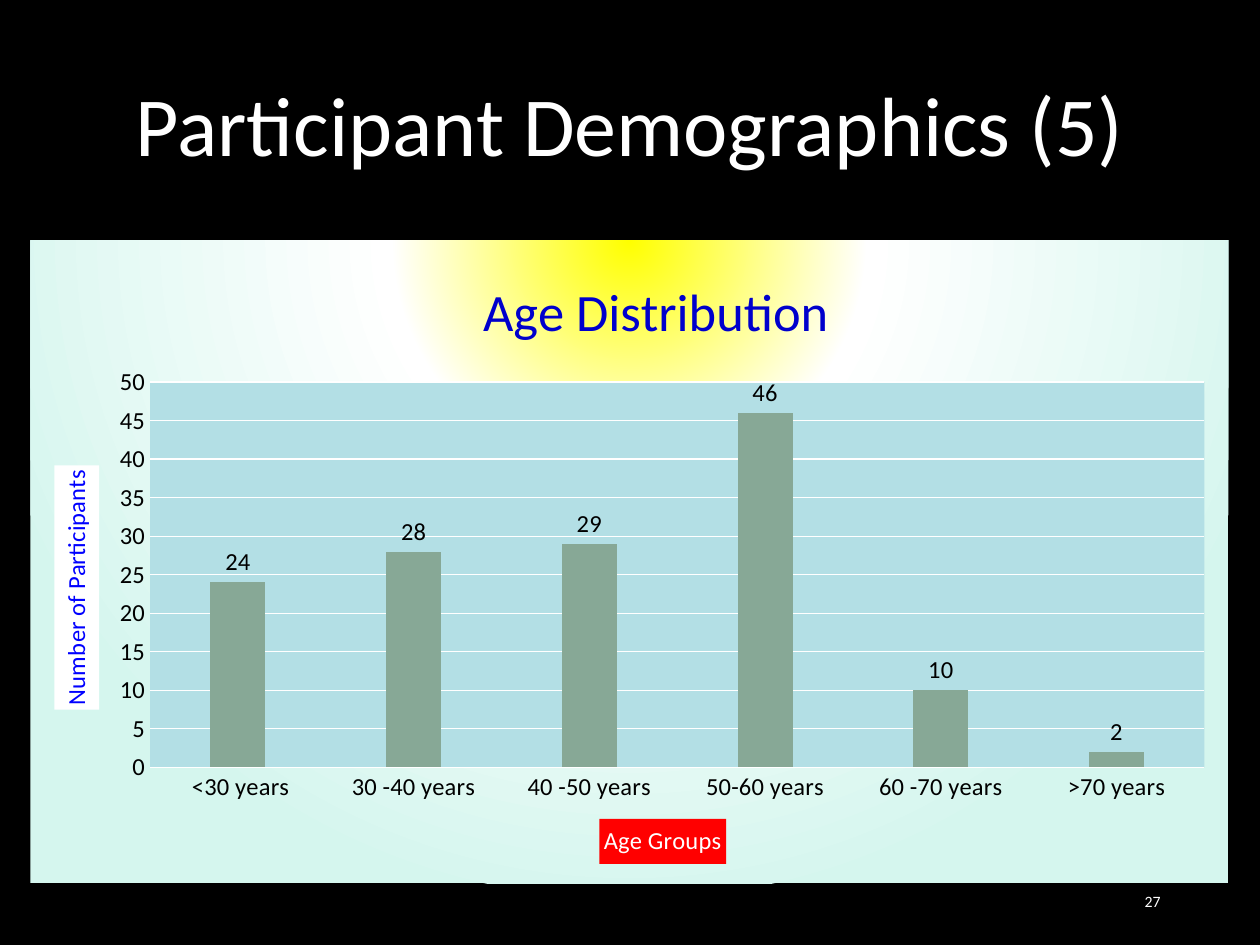
from lxml import etree
from pptx import Presentation
from pptx.chart.data import CategoryChartData
from pptx.dml.color import RGBColor
from pptx.enum.chart import XL_CHART_TYPE, XL_LABEL_POSITION, XL_TICK_MARK
from pptx.enum.text import MSO_ANCHOR, PP_ALIGN
from pptx.oxml import parse_xml
from pptx.oxml.ns import nsdecls, qn
from pptx.util import Inches, Pt

COLUMNS = XL_CHART_TYPE.COLUMN_CLUSTERED
OUTSIDE = XL_LABEL_POSITION.OUTSIDE_END
NO_TICK = XL_TICK_MARK.NONE
MIDDLE = MSO_ANCHOR.MIDDLE
CENTER, RIGHT = PP_ALIGN.CENTER, PP_ALIGN.RIGHT
WHITE, BLACK = "FFFFFF", "000000"


def style(font, size, color):
    font.name, font.size, font.bold = "Calibri", Pt(size), False
    font.color.rgb = RGBColor.from_string(color)


def place(parent, index, x, y, **size):
    """Give a chart part a fixed place, in shares of the chart's size."""
    for old in parent.findall(qn("c:layout")):
        parent.remove(old)
    layout = etree.Element(qn("c:layout"))
    manual = etree.SubElement(layout, qn("c:manualLayout"))
    settings = {"xMode": "edge", "yMode": "edge", "x": x, "y": y, **size}
    if size:
        settings = {"layoutTarget": "inner", **settings}
    for key, value in settings.items():
        etree.SubElement(manual, qn(f"c:{key}")).set("val", str(value))
    parent.insert(index, layout)


prs = Presentation()
prs.slide_width, prs.slide_height = Inches(10), Inches(7.5)
slide = prs.slides.add_slide(prs.slide_layouts[5])
slide.background.fill.solid()
slide.background.fill.fore_color.rgb = RGBColor.from_string(BLACK)

# Heading
heading = slide.shapes.title
heading.left, heading.top = Inches(0.5), Inches(0.4)
heading.width, heading.height = Inches(9), Inches(1.25)
heading.text_frame.text = "Participant Demographics (5)"
heading.text_frame.vertical_anchor = MIDDLE
heading_line = heading.text_frame.paragraphs[0]
heading_line.alignment, heading_line.line_spacing = CENTER, 0.9
style(heading_line.runs[0].font, 48, WHITE)

# Age chart
ages = CategoryChartData()
ages.categories = [" <30 years", "30 -40 years", "40 -50 years",
                   "50-60 years", "60 -70 years", ">70 years"]
ages.add_series("Series 1", (24, 28, 29, 46, 10, 2))
chart = slide.shapes.add_chart(
    COLUMNS, Inches(0.24), Inches(1.91), Inches(9.51), Inches(5.1), ages).chart
style(chart.font, 10, WHITE)
chart.has_legend = False

# Bars and their values
bars = chart.plots[0]
bars.gap_width, bars.overlap, bars.vary_by_categories = 219, -27, False
bar_fill = bars.series[0].format.fill
bar_fill.solid()
bar_fill.fore_color.rgb = RGBColor.from_string("87A896")
bars.has_data_labels = True
values = bars.data_labels
values.show_value, values.position = True, OUTSIDE
style(values.font, 14, BLACK)

# Axes
groups, counts = chart.category_axis, chart.value_axis
for axis in (groups, counts):
    axis.major_tick_mark = axis.minor_tick_mark = NO_TICK
    style(axis.tick_labels.font, 14, BLACK)
counts.minimum_scale, counts.maximum_scale, counts.major_unit = 0, 50, 5
counts.format.line.fill.background()
counts.has_major_gridlines = True
for line in (groups.format.line, counts.major_gridlines.format.line):
    line.width = Pt(0.75)
    line.color.rgb = RGBColor.from_string(WHITE)

# Chart and axis titles: owner, words, size, colour, fill, x, y
chart.has_title = groups.has_title = counts.has_title = True
for title, words, size, color, fill, x, y in (
    (chart.chart_title, "Age Distribution", 30, "0000CC", None, 0.37, 0.04),
    (groups.axis_title, "Age Groups", 14, WHITE, "FF0000", 0.475, 0.9),
    (counts.axis_title, "Number of Participants", 14, "0000FF", WHITE, 0.02, 0.35),
):
    title.text_frame.text = words
    style(title.text_frame.paragraphs[0].runs[0].font, size, color)
    if fill:
        title.format.fill.solid()
        title.format.fill.fore_color.rgb = RGBColor.from_string(fill)
    place(title.text_frame._txBody.getparent().getparent(), 1, x, y)
counts_body = counts.axis_title.text_frame._txBody.find(qn("a:bodyPr"))
counts_body.set("rot", "-5400000")
counts_body.set("vert", "horz")

# Plot area and the glow behind it
plot_area = chart._chartSpace.chart.plotArea
place(plot_area, 0, 0.1, 0.22, w=0.88, h=0.6)
plot_area.append(parse_xml(
    f'<c:spPr {nsdecls("c", "a")}><a:solidFill><a:srgbClr val="B3DFE5"/>'
    '</a:solidFill><a:ln><a:noFill/></a:ln></c:spPr>'))
stops = "".join(
    f'<a:gs pos="{share * 1000}"><a:srgbClr val="{color}"/></a:gs>'
    for share, color in ((0, "FFFF00"), (35, WHITE), (100, "D5F6EE")))
chart._chartSpace.chart.addnext(parse_xml(
    f'<c:spPr {nsdecls("c", "a")}><a:gradFill><a:gsLst>{stops}</a:gsLst>'
    '<a:path path="circle"><a:fillToRect l="50000" t="-80000" r="50000" '
    'b="180000"/></a:path></a:gradFill><a:ln><a:noFill/></a:ln></c:spPr>'))

# Page number
page = slide.shapes.add_textbox(
    Inches(7.06), Inches(6.95), Inches(2.25), Inches(0.4)).text_frame
page.word_wrap, page.vertical_anchor = True, MIDDLE
page.text = "27"
page.paragraphs[0].alignment = RIGHT
style(page.paragraphs[0].runs[0].font, 9, WHITE)

prs.save("out.pptx")
